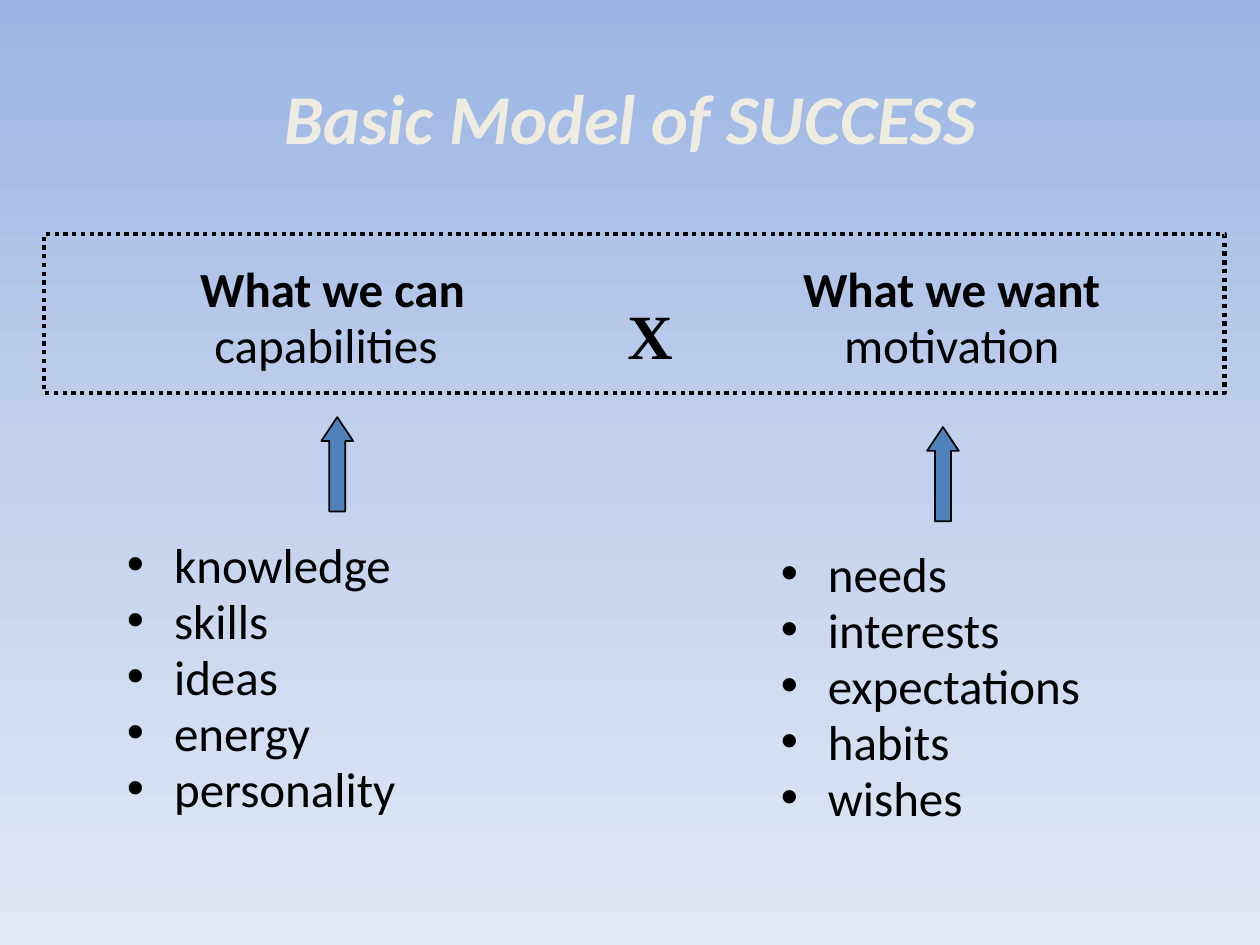
import copy
import pptx
import pptx.util
import pptx.dml.color
import pptx.enum.dml
import pptx.enum.shapes
import pptx.enum.text
import pptx.oxml.ns
import lxml.etree

Cm, Pt = pptx.util.Cm, pptx.util.Pt
ALIGN = pptx.enum.text.PP_ALIGN
ANCHOR = pptx.enum.text.MSO_ANCHOR
SHAPE = pptx.enum.shapes.MSO_SHAPE

BACKGROUND = [(0, "9AB5E4"), (0.5, "C2D1ED"), (1, "E1E8F5")]
TITLE = "Basic Model of SUCCESS"
OPERATOR = "X"
FACTORS = [
    {"heads": ["What we can", "capabilities\t"],
     "items": ["knowledge", "skills", "ideas", "energy", "personality"],
     "left": 2.31, "width": 8.79, "arrow": (6.48, 8.41), "list_top": 10.88},
    {"heads": ["What we want", "motivation"],
     "items": ["needs", "interests", "expectations", "habits", "wishes"],
     "left": 15.49, "width": 7.39, "arrow": (18.69, 8.61), "list_top": 11.06},
]
HEAD_TOP, HEAD_HEIGHT, LIST_HEIGHT = 5.32, 2.5, 6
ARROW_SIZE = (0.64, 1.9)
INDENT = Cm(0.95)

TITLE_FONT = {"name": "Calibri", "size": Pt(40), "bold": True, "italic": True}
HEAD_FONT = {"name": "Calibri", "size": Pt(28), "bold": True}
BODY_FONT = {"name": "Calibri", "size": Pt(28), "bold": False}
OPERATOR_FONT = {"name": "Times New Roman", "size": Pt(36), "bold": True}


def color(value):
    return pptx.dml.color.RGBColor.from_string(value)


def apply(target, values):
    for name, value in values.items():
        setattr(target, name, value)


def paint_background(slide):
    fill = slide.background.fill
    fill.gradient()
    fill.gradient_angle = 270
    stop_list = slide.element.xpath(".//a:gsLst")[0]
    stop_list.append(copy.deepcopy(stop_list[-1]))
    for stop, (position, value) in zip(fill.gradient_stops, BACKGROUND):
        stop.position = position
        stop.color.rgb = color(value)


def add_text(slide, place, lines, align=ALIGN.CENTER, text_color="000000",
             anchor=ANCHOR.TOP, layout=None, hanging=False, bullet=False):
    frame = slide.shapes.add_textbox(*map(Cm, place)).text_frame
    apply(frame, {"word_wrap": True, "vertical_anchor": anchor})
    for index, (text, font) in enumerate(lines):
        paragraph = frame.add_paragraph() if index else frame.paragraphs[0]
        paragraph.alignment = align
        if index:
            apply(paragraph, {"space_before": Pt(5.1)})
        apply(paragraph, layout or {})
        run = paragraph.add_run()
        run.text = text
        apply(run.font, font)
        run.font.color.rgb = color(text_color)
        if hanging:
            properties = paragraph._p.get_or_add_pPr()
            properties.set("marL", str(INDENT))
            properties.set("indent", str(-INDENT))
            if bullet:
                for tag, key, value in (("a:buFont", "typeface", "Arial"),
                                        ("a:buChar", "char", "•")):
                    lxml.etree.SubElement(
                        properties, pptx.oxml.ns.qn(tag)).set(key, value)


def add_outlined(slide, kind, place, width, fill=None):
    shape = slide.shapes.add_shape(kind, *map(Cm, place))
    shape.shadow.inherit = False
    if fill:
        shape.fill.solid()
        shape.fill.fore_color.rgb = color(fill)
    else:
        shape.fill.background()
    shape.line.color.rgb = color("000000")
    shape.line.width = Pt(width)
    return shape


def add_factor(slide, factor):
    left, width = factor["left"], factor["width"]
    layout = {"line_spacing": 0.8}
    add_text(slide, (left, HEAD_TOP, width, HEAD_HEIGHT),
             list(zip(factor["heads"], (HEAD_FONT, BODY_FONT))),
             layout=layout, hanging=True)
    add_text(slide, (left, factor["list_top"], width, LIST_HEIGHT),
             [(item, BODY_FONT) for item in factor["items"]],
             align=ALIGN.LEFT, layout=layout, hanging=True, bullet=True)
    arrow = add_outlined(slide, SHAPE.UP_ARROW,
                         factor["arrow"] + ARROW_SIZE, 1, "4F81BD")
    arrow.adjustments[0] = 0.5
    arrow.adjustments[1] = 0.75


def main():
    presentation = pptx.Presentation()
    apply(presentation, {"slide_width": Cm(25.4), "slide_height": Cm(19.05)})
    slide = presentation.slides.add_slide(presentation.slide_layouts[6])
    paint_background(slide)
    add_text(slide, (1.27, 0.76, 22.86, 3.18), [(TITLE, TITLE_FONT)],
             text_color="EEECE1", anchor=ANCHOR.MIDDLE)
    for factor in FACTORS:
        add_factor(slide, factor)
    add_text(slide, (9.7, 5.85, 6.81, 1.8), [(OPERATOR, OPERATOR_FONT)])
    border = add_outlined(slide, SHAPE.RECTANGLE, (0.89, 4.72, 23.8, 3.2), 2.5)
    border.line.dash_style = pptx.enum.dml.MSO_LINE.ROUND_DOT
    presentation.save("out.pptx")


if __name__ == "__main__":
    main()
